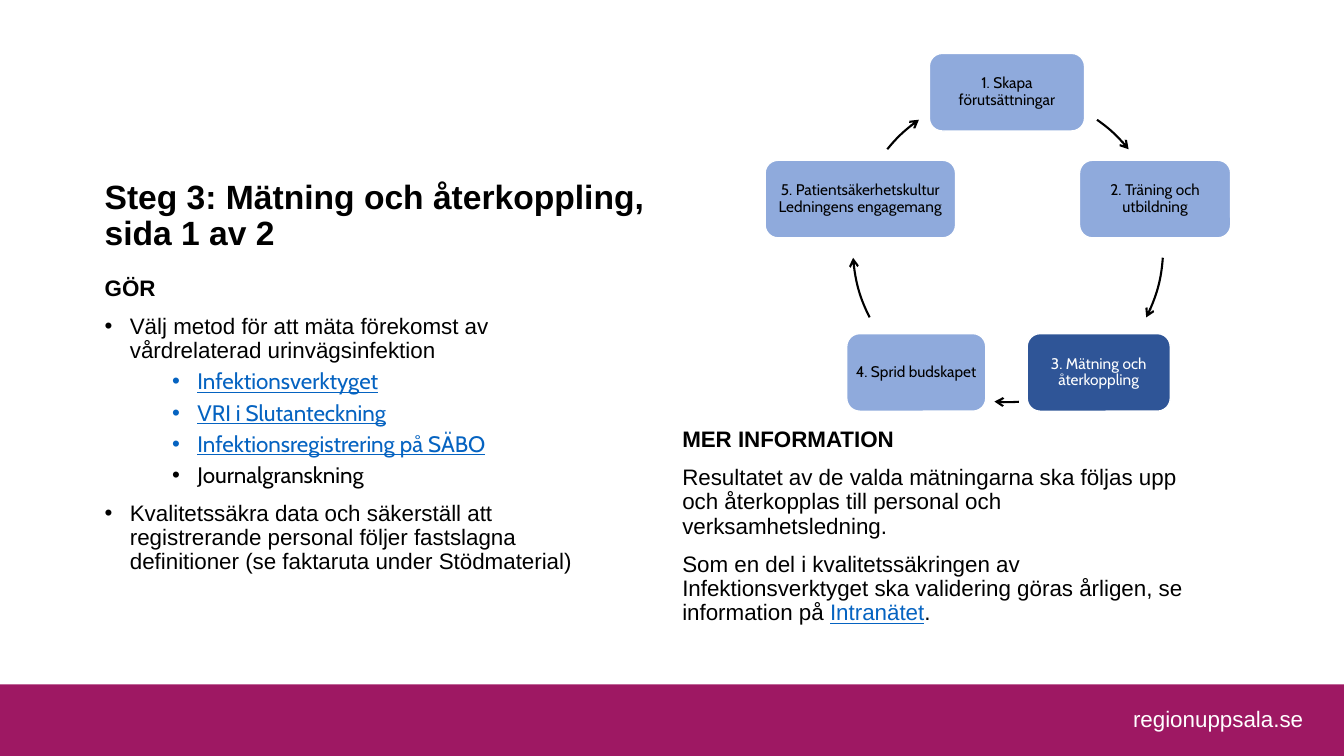
from dataclasses import dataclass
from math import cos, radians, sin

from lxml import etree
from pptx import Presentation
from pptx import util as u
from pptx.dml.color import RGBColor
from pptx.enum import shapes, text
from pptx.oxml.ns import qn

BLACK, WHITE, LINK = "000000", "FFFFFF", "0563C1"
PLUM, LIGHT_BLUE, DARK_BLUE = "9E1863", "8FAADC", "2F5597"
ARIAL, CABIN = "Arial", "Cabin"
SLIDE_WIDTH, SLIDE_HEIGHT = 40 / 3, 7.5
CYCLE_LEFT, CYCLE_TOP, CYCLE_RADIUS = 8.46, 0.91, 1.54
STEP_HEIGHT = 0.77


@dataclass
class Span:
    words: str
    color: str = BLACK
    bold: bool = False
    underline: bool = False
    font: str = ARIAL


@dataclass
class Para:
    spans: list[Span]
    indent: float = 0
    before: float = 10
    level: int = 0


@dataclass
class Step:
    label: str
    left: float
    top: float
    width: float
    arrow_from: float  # degrees clockwise from three o'clock
    arrow_to: float
    fill: str = LIGHT_BLUE
    color: str = BLACK


def rgb(value: str) -> RGBColor:
    return RGBColor.from_string(value)


def style_run(run, span: Span, size: float) -> None:
    run.font.name, run.font.size = span.font, u.Pt(size)
    run.font.bold, run.font.underline = span.bold, span.underline
    run.font.color.rgb = rgb(span.color)


def set_insets(frame, x: float, y: float) -> None:
    frame.margin_left = frame.margin_right = u.Inches(x)
    frame.margin_top = frame.margin_bottom = u.Inches(y)


def add_bullet(paragraph, indent: float) -> None:
    properties = paragraph._p.get_or_add_pPr()
    properties.set("marL", str(u.Inches(indent)))
    properties.set("indent", str(u.Inches(-0.25)))
    font = etree.SubElement(properties, qn("a:buFont"))
    font.set("typeface", ARIAL)
    etree.SubElement(properties, qn("a:buChar")).set("char", "•")


def add_body(slide, box: tuple, paras: list[Para], size: float) -> None:
    frame = slide.shapes.add_textbox(*map(u.Inches, box)).text_frame
    frame.word_wrap = True
    for index, para in enumerate(paras):
        paragraph = frame.add_paragraph() if index else frame.paragraphs[0]
        if para.indent:
            add_bullet(paragraph, para.indent)
        paragraph.level = para.level
        paragraph.line_spacing = 0.9
        paragraph.space_before = u.Pt(para.before if index else 0)
        for span in para.spans:
            run = paragraph.add_run()
            run.text = span.words
            style_run(run, span, size)


def add_step(slide, step: Step) -> None:
    box = map(u.Inches, (step.left, step.top, step.width, STEP_HEIGHT))
    card = slide.shapes.add_shape(shapes.MSO_SHAPE.ROUNDED_RECTANGLE, *box)
    card.shadow.inherit = False
    card.fill.solid()
    card.fill.fore_color.rgb = rgb(step.fill)
    card.line.color.rgb = rgb(WHITE)
    card.line.width = u.Pt(1)
    frame = card.text_frame
    frame.word_wrap = True
    frame.vertical_anchor = text.MSO_ANCHOR.MIDDLE
    set_insets(frame, 0.05, 0.05)
    frame.text = step.label
    paragraph = frame.paragraphs[0]
    paragraph.alignment = text.PP_ALIGN.CENTER
    paragraph.line_spacing = 0.9
    style_run(paragraph.runs[0], Span(step.label, step.color, font=CABIN), 11)


def add_cycle_arrow(slide, start: float, end: float) -> None:
    # The frame spans the whole cycle; the outline is one arc of it
    left, top, radius = map(u.Inches, (CYCLE_LEFT, CYCLE_TOP, CYCLE_RADIUS))
    builder = slide.shapes.build_freeform(left, top)
    builder.add_line_segments([(left + 2 * radius, top + 2 * radius)], close=False)
    arrow = builder.convert_to_shape()
    outline = next(arrow._element.iter(qn("a:path")))
    for segment in list(outline):
        outline.remove(segment)
    point = etree.SubElement(etree.SubElement(outline, qn("a:moveTo")), qn("a:pt"))
    point.set("x", str(round(radius * (1 + cos(radians(start))))))
    point.set("y", str(round(radius * (1 + sin(radians(start))))))
    arc = etree.SubElement(outline, qn("a:arcTo"))
    for name, value in (("wR", radius), ("hR", radius), ("stAng", start % 360 * 60000),
                        ("swAng", (end - start) * 60000)):
        arc.set(name, str(round(value)))
    arrow.shadow.inherit = False
    arrow.fill.background()
    arrow.line.color.rgb = rgb(BLACK)
    arrow.line.width = u.Pt(1.5)
    etree.SubElement(arrow.line._get_or_add_ln(), qn("a:tailEnd")).set("type", "arrow")


def add_footer(slide) -> None:
    band = slide.shapes.add_shape(shapes.MSO_SHAPE.RECTANGLE, 0, u.Inches(6.79),
                                  u.Inches(SLIDE_WIDTH), u.Inches(0.71))
    band.shadow.inherit = False
    band.fill.solid()
    band.fill.fore_color.rgb = rgb(PLUM)
    band.line.fill.background()
    address = slide.shapes.add_textbox(*map(u.Inches, (11, 6.79, 2.17, 0.67)))
    frame = address.text_frame
    frame.word_wrap = True
    frame.vertical_anchor = text.MSO_ANCHOR.MIDDLE
    set_insets(frame, 0.13, 0.07)
    frame.text = "regionuppsala.se"
    frame.paragraphs[0].alignment = text.PP_ALIGN.CENTER
    style_run(frame.paragraphs[0].runs[0], Span(frame.text, WHITE), 16)


def link_item(words: str) -> Para:
    return Para([Span(words, LINK, underline=True, font=CABIN)], 0.92, 5, 1)


HEADING = [Para([Span("Steg 3: Mätning och återkoppling, sida 1 av 2", bold=True)])]
ACTIONS = [
    Para([Span("GÖR", bold=True)]),
    Para([Span("Välj metod för att mäta förekomst av vårdrelaterad urinvägsinfektion")], 0.25),
    link_item("Infektionsverktyget"),
    link_item("VRI i Slutanteckning"),
    link_item("Infektionsregistrering på SÄBO"),
    Para([Span("Journalgranskning", font=CABIN)], 0.92, 5, 1),
    Para([Span("Kvalitetssäkra data och säkerställ att registrerande personal följer "
               "fastslagna definitioner (se faktaruta under Stödmaterial)")], 0.25),
]
MORE_INFO = [
    Para([Span("MER INFORMATION", bold=True)]),
    Para([Span("Resultatet av de valda mätningarna ska följas upp och återkopplas "
               "till personal och verksamhetsledning.")]),
    Para([Span("Som en del i kvalitetssäkringen av Infektionsverktyget ska validering "
               "göras årligen, se information på "),
          Span("Intranätet", LINK, underline=True), Span(".")]),
]
STEPS = [
    Step("1. Skapa förutsättningar", 9.22, 0.53, 1.54, -55, -39),
    Step("2. Träning och utbildning", 10.71, 1.59, 1.5, 4, 27),
    Step("3. Mätning och återkoppling", 10.19, 3.31, 1.42, 86, 95, DARK_BLUE, WHITE),
    Step("4. Sprid budskapet", 8.4, 3.31, 1.38, 153, 176),
    Step("5. Patientsäkerhetskultur Ledningens engagemang", 7.59, 1.59, 1.89, 219, 235),
]


def main() -> None:
    deck = Presentation()
    deck.slide_width, deck.slide_height = u.Inches(SLIDE_WIDTH), u.Inches(SLIDE_HEIGHT)
    slide = deck.slides.add_slide(deck.slide_layouts[6])

    add_footer(slide)

    # Heading and actions
    add_body(slide, (0.94, 1.74, 5.93, 0.86), HEADING, 24)
    add_body(slide, (0.94, 2.7, 5.31, 3.06), ACTIONS, 16)

    # Cycle of five steps
    for step in STEPS:
        add_step(slide, step)
        add_cycle_arrow(slide, step.arrow_from, step.arrow_to)

    # Further information
    add_body(slide, (6.67, 4.2, 5.31, 2.16), MORE_INFO, 16)

    deck.save("out.pptx")


if __name__ == "__main__":
    main()
